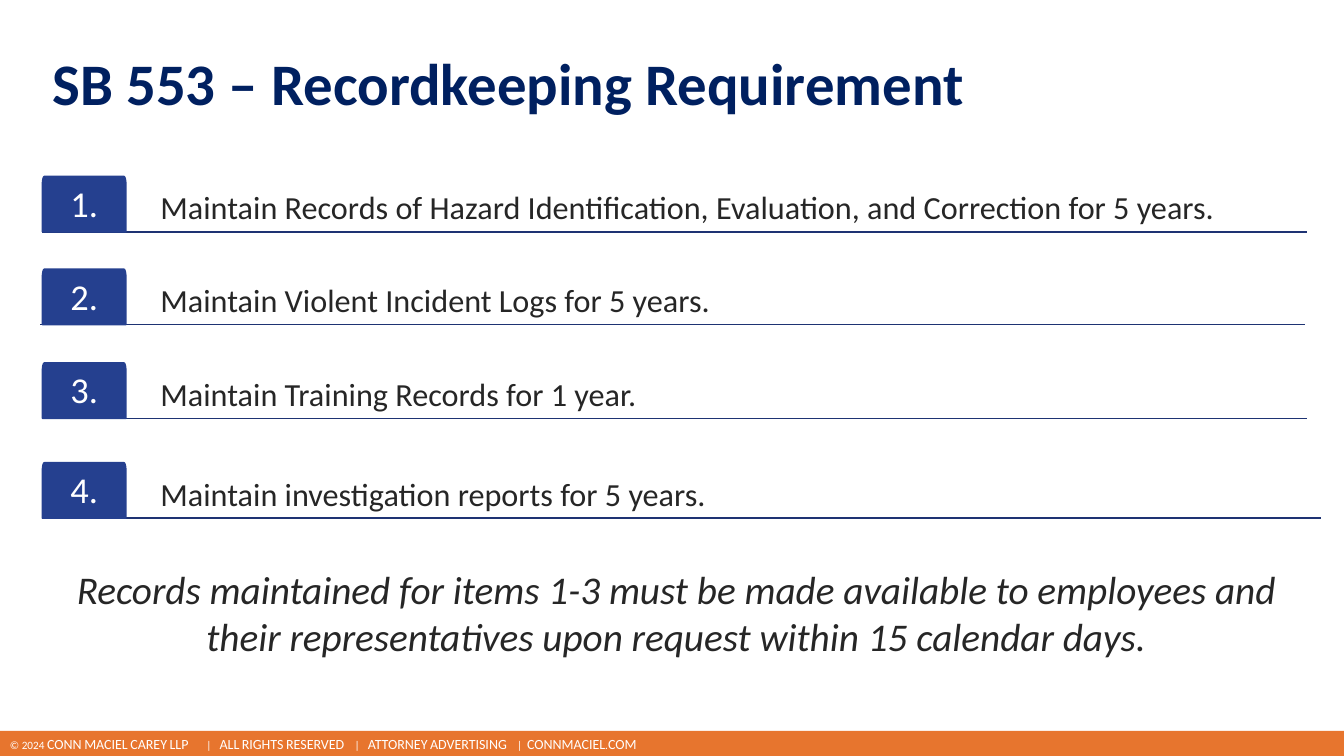
from math import cos, pi, sin

from lxml.etree import SubElement
from pptx import Presentation
from pptx.dml.color import RGBColor
from pptx.enum.shapes import MSO_CONNECTOR, MSO_SHAPE
from pptx.enum.text import MSO_ANCHOR, PP_ALIGN
from pptx.oxml.ns import qn
from pptx.util import Inches, Pt

COLORS = {
    "title": "002060",
    "text": "262626",
    "tab": "25408F",
    "rule": "1E3373",
    "footer": "E7752E",
    "white": "FFFFFF",
}
FONT = "Calibri"


def color(name):
    return RGBColor.from_string(COLORS[name])


def write_text(shape, text, size, ink, bold=False, italic=False, small_caps=False,
               align=PP_ALIGN.LEFT, anchor=MSO_ANCHOR.TOP, spacing=0.9,
               insets=(0.1, 0.05, 0.1, 0.05), tab_stops=()):
    """Fill a shape with one formatted paragraph."""
    frame = shape.text_frame
    frame.word_wrap = True
    frame.vertical_anchor = anchor
    (frame.margin_left, frame.margin_top,
     frame.margin_right, frame.margin_bottom) = map(Inches, insets)
    paragraph = frame.paragraphs[0]
    paragraph.alignment = align
    paragraph.line_spacing = spacing
    if tab_stops:
        stops = SubElement(paragraph._p.get_or_add_pPr(), qn("a:tabLst"))
        for position in tab_stops:
            SubElement(stops, qn("a:tab"), pos=str(Inches(position)), algn="l")
    run = paragraph.add_run()
    run.text = text
    run.font.name = FONT
    run.font.size = Pt(size)
    run.font.bold = bold
    run.font.italic = italic
    run.font.color.rgb = color(ink)
    if small_caps:
        run._r.get_or_add_rPr().set("cap", "small")


class SlideBuilder:
    def __init__(self, slide):
        self.slide = slide

    def text(self, left, top, width, height, text, **style):
        box = self.slide.shapes.add_textbox(*map(Inches, (left, top, width, height)))
        write_text(box, text, **style)

    def rule(self, left, top, width):
        line = self.slide.shapes.add_connector(
            MSO_CONNECTOR.STRAIGHT, *map(Inches, (left, top, left + width, top)))
        line.line.color.rgb = color("rule")
        line.line.width = Pt(1)
        SubElement(line._element.spPr, qn("a:effectLst"))

    def bar(self, left, top, width, height, fill, text, **style):
        bar = self.slide.shapes.add_shape(
            MSO_SHAPE.RECTANGLE, *map(Inches, (left, top, width, height)))
        bar.shadow.inherit = False
        bar.fill.solid()
        bar.fill.fore_color.rgb = color(fill)
        bar.line.fill.background()
        write_text(bar, text, **style)

    def number_tab(self, left, top, width, height, text, **style):
        """Draw a tab whose top corners are narrow elliptical curves."""
        radius_x, radius_y, steps = 0.02, 0.09, 6
        angles = [step * pi / 2 / steps for step in range(steps + 1)]
        right, bottom = left + width, top + height
        curve = [(radius_x * (1 - sin(angle)), radius_y * (1 - cos(angle)))
                 for angle in angles]
        points = [(right - x, top + y) for x, y in reversed(curve)]
        points += [(left + x, top + y) for x, y in curve]
        points += [(left, bottom), (right, bottom)]
        points = [(Inches(x), Inches(y)) for x, y in points]
        builder = self.slide.shapes.build_freeform(*points[0])
        builder.add_line_segments(points[1:], close=True)
        tab = builder.convert_to_shape()
        tab.shadow.inherit = False
        tab.fill.solid()
        tab.fill.fore_color.rgb = color("tab")
        tab.line.color.rgb = color("tab")
        tab.line.width = Pt(1)
        write_text(tab, text, **style)


def main():
    presentation = Presentation()
    presentation.slide_width = Inches(13.33)
    presentation.slide_height = Inches(7.5)
    slide = presentation.slides.add_slide(presentation.slide_layouts[6])
    builder = SlideBuilder(slide)

    # Footer
    footer = ["© 2024 CONN MACIEL CAREY LLP", "ALL RIGHTS RESERVED",
              "ATTORNEY ADVERTISING", "CONNMACIEL.COM"]
    builder.bar(0, 7.25, 13.33, 0.27, "footer", "\t|\t".join(footer), size=10,
                ink="white", small_caps=True, spacing=Pt(12),
                tab_stops=(1.95, 2.08, 3.42, 3.55, 5.03, 5.13))

    # Title
    builder.text(0.42, 0.38, 12, 0.96, "SB 553 – Recordkeeping Requirement",
                 size=42, ink="title", bold=True, anchor=MSO_ANCHOR.MIDDLE)

    # Numbered requirements: top, left end of the rule, wording
    row_height = 0.55
    requirements = [
        (1.75, 0.42, "Maintain Records of Hazard Identification, Evaluation, "
                     "and Correction for 5 years."),
        (2.67, 0.4, "Maintain Violent Incident Logs for 5 years."),
        (3.6, 0.42, "Maintain Training Records for 1 year."),
        (4.59, 0.56, "Maintain investigation reports for 5 years."),
    ]
    for number, (top, rule_left, wording) in enumerate(requirements, 1):
        builder.rule(rule_left, top + row_height, 12.54)
        builder.text(1.54, top, 11.42, row_height, wording, size=23, ink="text",
                     anchor=MSO_ANCHOR.BOTTOM, insets=(0.05,) * 4)
        builder.number_tab(0.42, top, 0.83, row_height, f"{number}.", size=26,
                           ink="white", align=PP_ALIGN.CENTER,
                           anchor=MSO_ANCHOR.MIDDLE, insets=(0.08, 0.08, 0.08, 0.05))

    # Closing note
    builder.text(0.56, 5.55, 12.29, 1.13,
                 "Records maintained for items 1-3 must be made available to employees "
                 "and their representatives upon request within 15 calendar days.",
                 size=28, ink="text", italic=True, align=PP_ALIGN.CENTER,
                 spacing=Pt(34))

    presentation.save("out.pptx")


if __name__ == "__main__":
    main()
